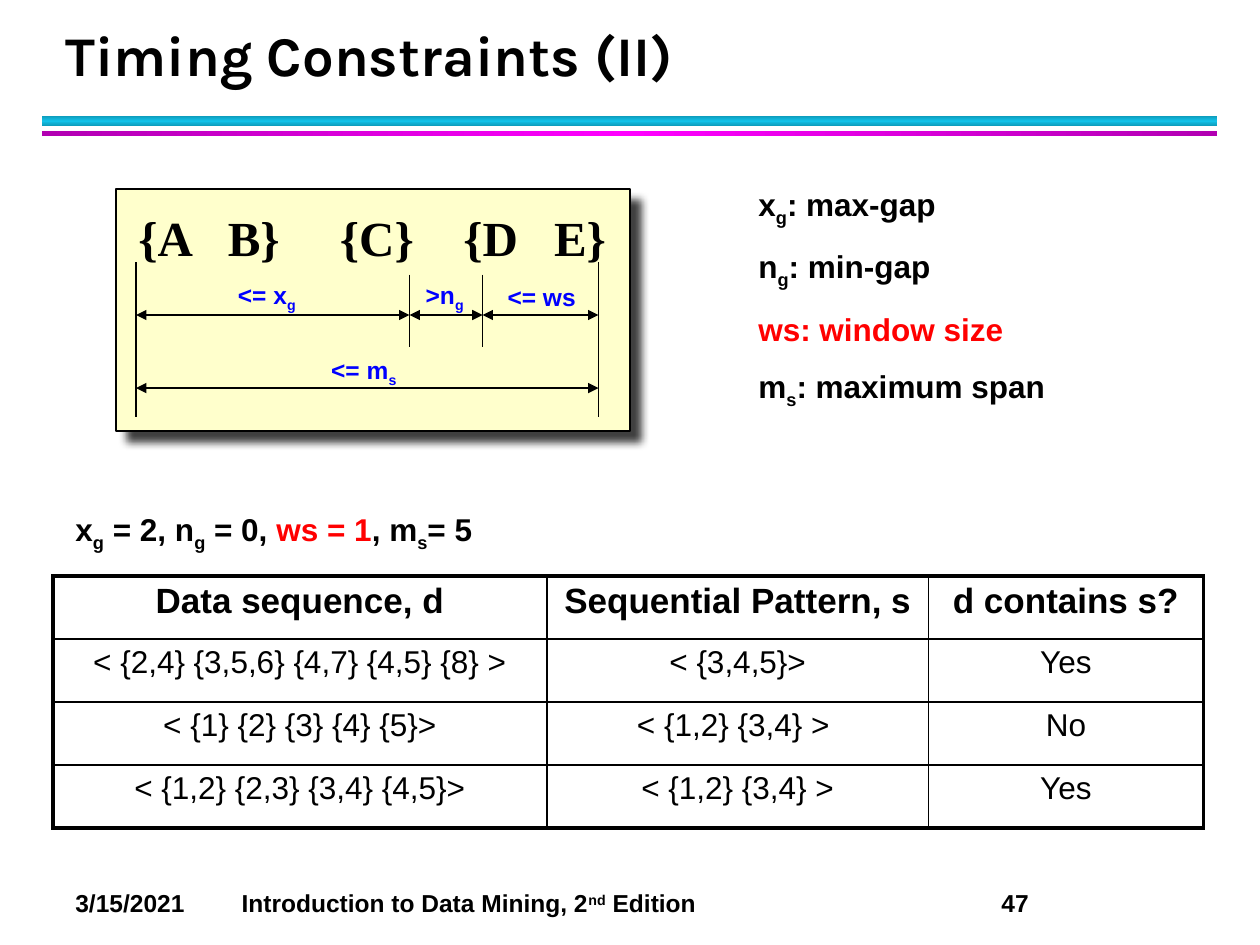
from copy import deepcopy
from dataclasses import dataclass

from pptx import Presentation, oxml
from pptx import util as u
from pptx.dml.color import RGBColor
from pptx.enum import shapes, text
from pptx.oxml import ns

IN = u.Inches


@dataclass(frozen=True)
class Theme:
    black: str = "000000"
    red: str = "FF0000"
    blue: str = "0000FF"
    cream: str = "FFFFCC"
    cyan: tuple = ("0E9BBA", "12C2E9")
    pink: tuple = ("B200B2", "FF00FF")
    sans: str = "Arial"
    serif: str = "Times New Roman"
    head: str = "Karla"
    title: int = 32
    sets: int = 28
    top: int = 20
    body: int = 18
    small: int = 14
    thin: float = 0.75
    inner: float = 1
    outer: float = 2.25


def node(tag, inner="", **attrs):
    """Make one drawing element."""
    pairs = " ".join(f'{key}="{val}"' for key, val in attrs.items())
    return oxml.parse_xml(f'<a:{tag} {ns.nsdecls("a")} {pairs}>{inner}</a:{tag}>')


def rgb(color):
    return RGBColor.from_string(color)


def write(frame, lines, size=Theme.body, font=Theme.sans, color=Theme.black,
          bold=True, align=text.PP_ALIGN.LEFT, before=0, after=0, lead=None,
          tabs=()):
    """Fill a frame. '|' parts runs; a leading _ ^ ! means sub, super, red."""
    for i, line in enumerate(lines):
        para = frame.paragraphs[0] if i == 0 else frame.add_paragraph()
        para.alignment = align
        para.space_before, para.space_after = u.Pt(before), u.Pt(after)
        if lead:
            para.line_spacing = u.Pt(lead)
        if tabs:
            stops = node("tabLst")
            for pos in tabs:
                stops.append(node("tab", pos=IN(pos), algn="l"))
            para._p.get_or_add_pPr().append(stops)
        for part in line.split("|"):
            mark = part[0] if part[0] in "_^!" else ""
            run = para.add_run()
            run.text = part[len(mark):]
            run.font.name, run.font.size, run.font.bold = font, u.Pt(size), bold
            run.font.color.rgb = rgb(Theme.red if mark == "!" else color)
            if mark in ("_", "^"):
                base = -25000 if mark == "_" else 30000
                run.font._element.set("baseline", str(base))


class Deck:
    def __init__(self, theme):
        self.t = theme
        self.prs = Presentation()
        self.prs.slide_width, self.prs.slide_height = IN(10), IN(7.5)
        self.slide = self.prs.slides.add_slide(self.prs.slide_layouts[5])
        self.items = self.slide.shapes

    def title(self, words, *box):
        item = self.items.title
        item.left, item.top, item.width, item.height = map(IN, box)
        frame = item.text_frame
        frame.auto_size = text.MSO_AUTO_SIZE.NONE
        frame.vertical_anchor = text.MSO_ANCHOR.BOTTOM
        write(frame, [words], size=self.t.title, font=self.t.head, lead=36)

    def rect(self, *box):
        item = self.items.add_shape(shapes.MSO_SHAPE.RECTANGLE, *map(IN, box))
        item.shadow.inherit = False
        item.line.fill.background()
        return item

    def bar(self, tones, angle, *box):
        item = self.rect(*box)
        fill = item.fill
        fill.gradient()
        fill.gradient_angle = angle
        for stop, tone, pos in zip(fill.gradient_stops, tones, (0, 0.5)):
            stop.color.rgb, stop.position = rgb(tone), pos
        stops = item.element.spPr.find(ns.qn("a:gradFill")).find(ns.qn("a:gsLst"))
        stops.append(deepcopy(stops[0]))
        fill.gradient_stops[2].position = 1

    def panel(self, *box):
        item = self.rect(*box)
        item.fill.solid()
        item.fill.fore_color.rgb = rgb(self.t.cream)
        item.line.color.rgb = rgb(self.t.black)
        item.line.width = u.Pt(self.t.thin)
        shade = '<a:srgbClr val="000000"><a:alpha val="75000"/></a:srgbClr>'
        item.element.spPr.find(ns.qn("a:effectLst")).append(
            node("outerShdw", shade, blurRad=u.Pt(5), dist=u.Pt(8.5),
                 dir=45 * 60000, algn="ctr", rotWithShape=0))

    def label(self, lines, *box, wrap=True, **style):
        frame = self.items.add_textbox(*map(IN, box)).text_frame
        frame.word_wrap = wrap
        write(frame, lines, **style)

    def line(self, x1, y1, x2, y2, arrow=False):
        item = self.items.add_connector(
            shapes.MSO_CONNECTOR.STRAIGHT, *map(IN, (x1, y1, x2, y2)))
        item.line.color.rgb = rgb(self.t.black)
        item.line.width = u.Pt(self.t.thin)
        props = item.element.spPr
        if arrow:
            for end in ("headEnd", "tailEnd"):
                props.find(ns.qn("a:ln")).append(node(end, type="triangle"))
        props.append(node("effectLst"))

    def edge(self, cell, widths):
        ink = f'<a:solidFill><a:srgbClr val="{self.t.black}"/></a:solidFill>'
        for side, width in zip("LRTB", widths):
            cell._tc.get_or_add_tcPr().append(
                node("ln" + side, ink, w=u.Pt(width)))

    def table(self, rows, cols, x, y, high):
        n, m = len(rows), len(cols)
        grid = self.items.add_table(
            n, m, IN(x), IN(y), IN(sum(cols)), IN(high * n)).table
        grid.first_row = grid.horz_banding = False
        for col, width in zip(grid.columns, cols):
            col.width = IN(width)
        for r, row in enumerate(rows):
            grid.rows[r].height = IN(high)
            for c, words in enumerate(row):
                cell = grid.cell(r, c)
                rims = (c == 0, c == m - 1, r == 0, r == n - 1)
                self.edge(cell, [self.t.outer if rim else self.t.inner
                                 for rim in rims])
                cell.fill.background()
                write(cell.text_frame, [words], bold=r == 0, before=2, after=4,
                      size=self.t.body if r else self.t.top,
                      align=text.PP_ALIGN.CENTER)


t = Theme()
deck = Deck(t)

# Title, rules and footer
deck.bar(t.cyan, 90, 0.33, 0.92, 9.33, 0.08)
deck.bar(t.pink, 0, 0.33, 1.04, 9.33, 0.04)
deck.title("Timing Constraints (II)", 0.42, 0.17, 9.06, 0.58)
deck.label(["3/15/2021\tIntroduction to Data Mining, 2|^nd| Edition\t47"],
           0.5, 7, 9.33, 0.34, size=t.small, tabs=(1.32, 7.35))

# Timing diagram: sets and span names
deck.panel(0.92, 1.5, 4.08, 1.92)
deck.label(["{A\tB}\t{C}\t{D\tE}"], 1, 1.6, 3.94, 0.57,
           size=t.sets, font=t.serif, tabs=(0.71, 1.6, 2.58, 3.3))
for name, x, y, wide in (("<= m|_s", 2.53, 2.77, 0.72),
                         ("<= x|_g", 1.79, 2.17, 0.66),
                         (">n|_g", 3.28, 2.17, 0.51),
                         ("<= ws", 3.93, 2.19, 0.74)):
    deck.label([name], x, y, wide, 0.33, wrap=False, size=t.small, color=t.blue)

# Timing diagram: arrows and ticks
marks = (1.08, 3.25, 3.83, 4.75)
for a, b in zip(marks, marks[1:]):
    deck.line(a, 2.5, b, 2.5, arrow=True)
deck.line(marks[0], 3.08, marks[-1], 3.08, arrow=True)
for x in marks:
    top, end = (2.08, 3.31) if x in (marks[0], marks[-1]) else (2.18, 2.75)
    deck.line(x, top, x, end)

# Legend and settings
deck.label(["x|_g|: max-gap", "n|_g|: min-gap", "!ws: window size",
            "m|_s|: maximum span"], 5.92, 1.42, 3.42, 1.84,
           size=t.body, before=2, after=9)
deck.label(["x|_g| = 2, n|_g| = 0, |!ws = 1|, m|_s|= 5"],
           0.5, 4, 8.58, 0.4, size=t.body, before=2, after=9)

# Examples
deck.table((("Data sequence, d", "Sequential Pattern, s", "d contains s?"),
            ("< {2,4} {3,5,6} {4,7} {4,5} {8} >", "< {3,4,5}>", "Yes"),
            ("< {1} {2} {3} {4} {5}>", "< {1,2} {3,4} > ", "No"),
            ("< {1,2} {2,3} {3,4} {4,5}>", "< {1,2} {3,4} >", "Yes")),
           (3.92, 3.03, 2.18), 0.42, 4.57, 0.5)

deck.prs.save("out.pptx")
